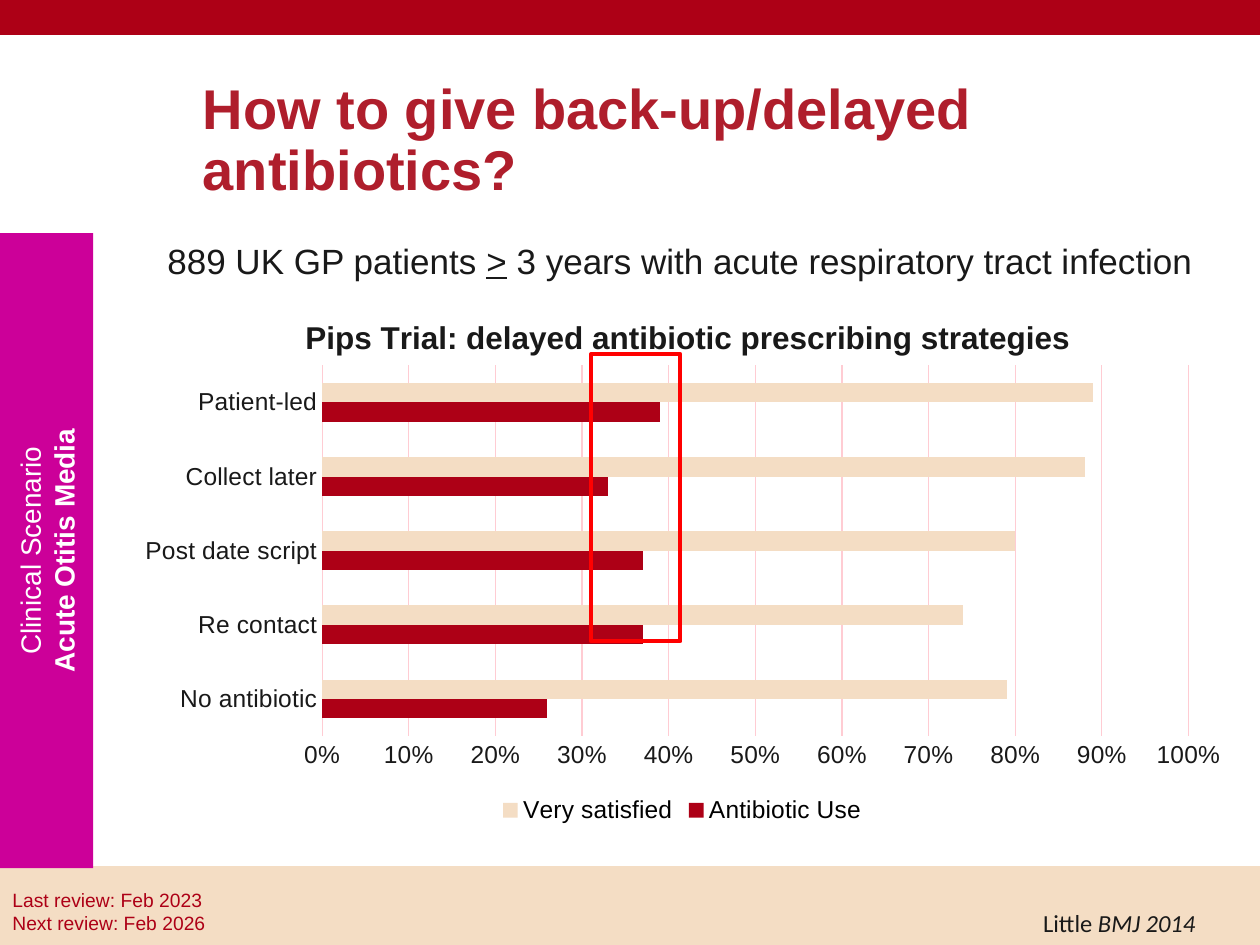
from lxml.etree import SubElement
from pptx import Presentation
from pptx.chart.data import CategoryChartData
from pptx.dml.color import RGBColor
from pptx.enum.chart import XL_CHART_TYPE, XL_LEGEND_POSITION, XL_TICK_MARK
from pptx.enum.shapes import MSO_SHAPE
from pptx.enum.text import MSO_ANCHOR, PP_ALIGN
from pptx.oxml.ns import qn
from pptx.util import Inches, Pt

RED = RGBColor(0xAD, 0x00, 0x16)
TITLE_RED = RGBColor(0xAF, 0x1E, 0x2C)
CREAM = RGBColor(0xF4, 0xDD, 0xC4)
MAGENTA = RGBColor(0xCC, 0x00, 0x99)
PINK = RGBColor(0xFF, 0xCC, 0xD3)
BRIGHT_RED = RGBColor(0xFF, 0x00, 0x00)
INK = RGBColor(0x19, 0x19, 0x19)
BLACK = RGBColor(0, 0, 0)
WHITE = RGBColor(0xFF, 0xFF, 0xFF)


def set_font(font, size, color, name="Arial", bold=False):
    font.size, font.name, font.bold = Pt(size), name, bold
    font.color.rgb = color


def add_rect(s, box, fill=None, line=None, width=1):
    sp = s.shapes.add_shape(MSO_SHAPE.RECTANGLE, *map(Inches, box))
    sp.shadow.inherit = False
    if fill is None:
        sp.fill.background()
    else:
        sp.fill.solid()
        sp.fill.fore_color.rgb = fill
    if line is None:
        sp.line.fill.background()
    else:
        sp.line.color.rgb = line
        sp.line.width = Pt(width)
    return sp


def fill_lines(sp, lines, size, color, align):
    """Write one paragraph per (text, bold) pair, centred vertically."""
    tf = sp.text_frame
    tf.vertical_anchor = MSO_ANCHOR.MIDDLE
    for i, (text, bold) in enumerate(lines):
        p = tf.add_paragraph() if i else tf.paragraphs[0]
        p.text, p.alignment = text, align
        set_font(p.font, size, color, bold=bold)


def add_side_band(s, box):
    sp = add_rect(s, box, MAGENTA)
    sp.text_frame._txBody.bodyPr.set("vert", "vert270")
    fill_lines(sp, [("Clinical Scenario", False), ("Acute Otitis Media", True)],
               16, WHITE, PP_ALIGN.CENTER)


def add_review_dates(s, box):
    sp = add_rect(s, box, CREAM)
    fill_lines(sp, [("Last review: Feb 2023", False), ("Next review: Feb 2026", False)],
               11, RED, PP_ALIGN.LEFT)


def set_title(s, box):
    sp = s.shapes.title
    sp.left, sp.top, sp.width, sp.height = map(Inches, box)
    tf = sp.text_frame
    tf.text = "How to give back-up/delayed antibiotics?"
    tf.vertical_anchor = MSO_ANCHOR.MIDDLE
    p = tf.paragraphs[0]
    p.alignment, p.line_spacing = PP_ALIGN.LEFT, 0.9
    set_font(p.font, 32, TITLE_RED, bold=True)


def add_text(s, box, runs, size, name="Arial"):
    """Add one paragraph of (text, emphasis) runs; emphasis names a font attribute."""
    tf = s.shapes.add_textbox(*map(Inches, box)).text_frame
    tf.word_wrap = True
    p = tf.paragraphs[0]
    set_font(p.font, size, INK, name)
    for text, emphasis in runs:
        r = p.add_run()
        r.text = text
        if emphasis:
            setattr(r.font, emphasis, True)


def set_layout(parent, index, **values):
    """Fix the place of a chart part; a missing layout element goes in at index."""
    layout = parent.find(qn("c:layout"))
    if layout is None:
        layout = parent.makeelement(qn("c:layout"))
        parent.insert(index, layout)
    manual = SubElement(layout, qn("c:manualLayout"))
    for tag, value in values.items():
        SubElement(manual, qn(f"c:{tag}")).set("val", str(value))


def add_trial_chart(s, box):
    data = CategoryChartData(number_format="0%")
    data.categories = ["No antibiotic", "Re contact", "Post date script",
                       "Collect later", "Patient-led"]
    data.add_series("Antibiotic Use", [0.26, 0.37, 0.37, 0.33, 0.39])
    data.add_series("Very satisfied", [0.79, 0.74, 0.8, 0.88, 0.89])
    chart = s.shapes.add_chart(XL_CHART_TYPE.BAR_CLUSTERED,
                               *map(Inches, box), data).chart
    set_font(chart.font, 10, RED, "Calibri")

    title = chart.chart_title
    title.text_frame.text = "Pips Trial: delayed antibiotic prescribing strategies"
    set_font(title.text_frame.paragraphs[0].font, 18, INK, bold=True)
    set_layout(title._element, 1, xMode="edge", yMode="edge", x=0.16, y=0.05)

    plot = chart.plots[0]
    plot.gap_width, plot.overlap, plot.vary_by_categories = 182, 0, False
    for series, color in zip(plot.series, (RED, CREAM)):
        series.format.fill.solid()
        series.format.fill.fore_color.rgb = color
    set_layout(chart._chartSpace.chart.plotArea, 0, layoutTarget="inner",
               xMode="edge", yMode="edge", x=0.18, y=0.15, w=0.77, h=0.68)

    cat, val = chart.category_axis, chart.value_axis
    for axis in (cat, val):
        axis.major_tick_mark = axis.minor_tick_mark = XL_TICK_MARK.NONE
        set_font(axis.tick_labels.font, 14, INK)
    val.minimum_scale, val.maximum_scale, val.major_unit = 0, 1, 0.1
    val.tick_labels.number_format = "0%"
    val.tick_labels.number_format_is_linked = False
    val.format.line.fill.background()
    for line in (cat.format.line, val.major_gridlines.format.line):
        line.color.rgb = PINK
        line.width = Pt(0.75)

    chart.has_legend = True
    chart.legend.position = XL_LEGEND_POSITION.BOTTOM
    chart.legend.include_in_layout = False
    set_font(chart.legend.font, 14, BLACK)


def main():
    prs = Presentation()
    prs.slide_width, prs.slide_height = Inches(10), Inches(7.5)
    s = prs.slides.add_slide(prs.slide_layouts[5])
    add_rect(s, (0, 6.88, 10, 0.62), CREAM, CREAM)
    add_rect(s, (0, -0.01, 10, 0.28), RED, RED)
    add_side_band(s, (0, 1.85, 0.74, 5.04))
    set_title(s, (1.51, 0.4, 8.38, 1.45))
    add_text(s, (1.23, 1.85, 8.77, 0.44),
             [("889 UK GP patients ", None), (">", "underline"),
              (" 3 years with acute respiratory tract infection", None)], 20)
    add_trial_chart(s, (0.95, 2.25, 8.93, 4.33))
    add_rect(s, (4.69, 2.81, 0.71, 2.28), line=BRIGHT_RED, width=2.25)
    add_review_dates(s, (0, 7, 3.34, 0.47))
    add_text(s, (8.18, 7.16, 1.7, 0.34),
             [("Little ", None), ("BMJ 2014", "italic")], 14, "Calibri")
    prs.save("out.pptx")


if __name__ == "__main__":
    main()
